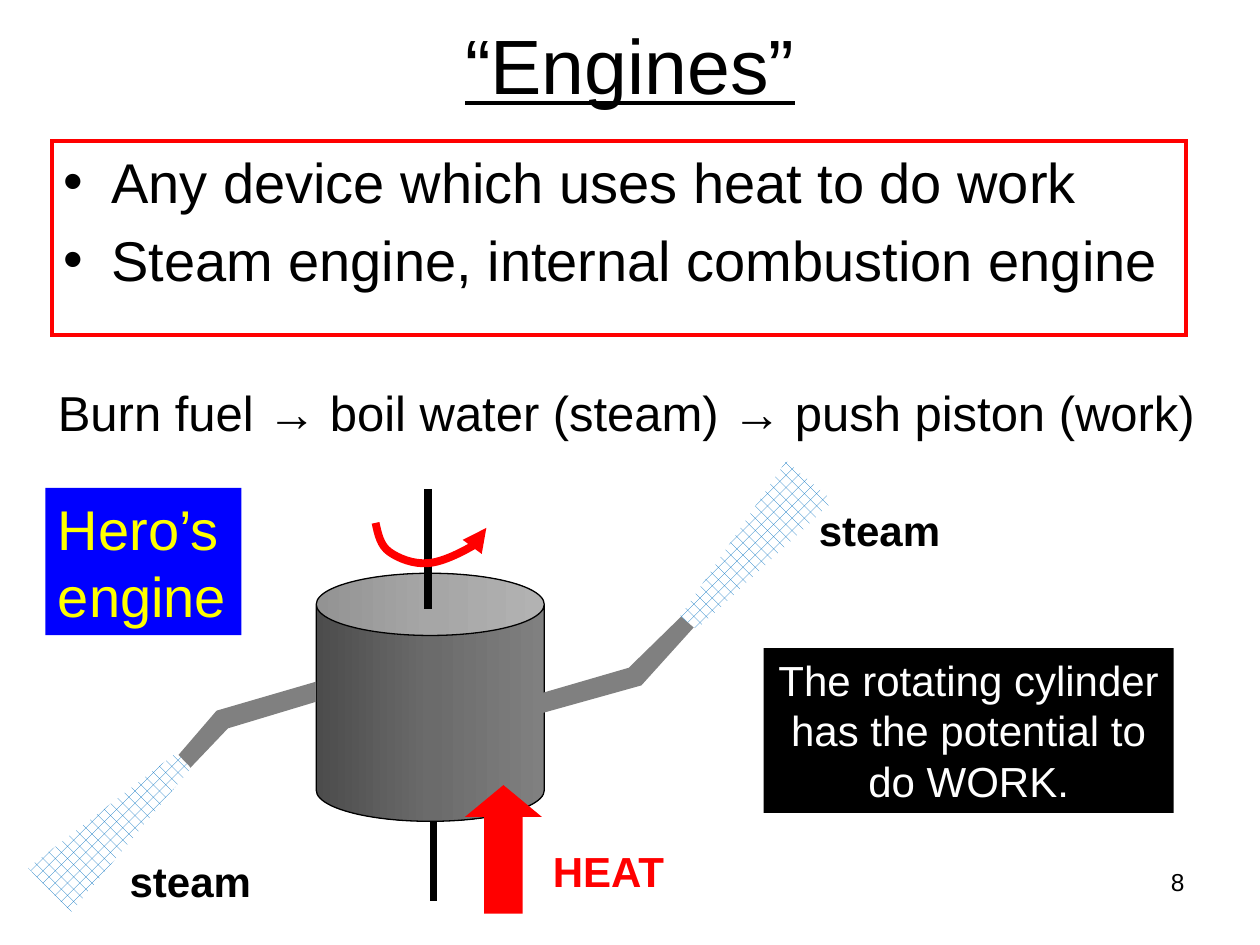
import copy

import pptx
import pptx.dml.color
import pptx.enum.dml
import pptx.enum.shapes
import pptx.enum.text
import pptx.oxml
import pptx.oxml.ns
import pptx.util
from lxml import etree

Pt = pptx.util.Pt
qn = pptx.oxml.ns.qn
SHAPE = pptx.enum.shapes.MSO_SHAPE
ALIGN = pptx.enum.text.PP_ALIGN
ANCHOR = pptx.enum.text.MSO_ANCHOR
AUTO = pptx.enum.text.MSO_AUTO_SIZE


def rgb(value):
    return pptx.dml.color.RGBColor.from_string(value)


def apply(obj, values):
    for name, value in values.items():
        setattr(obj, name, value)


class Deck:
    font = "Arial"
    black, white, red, grey = "000000", "FFFFFF", "FF0000", "808080"

    def __init__(self, width, height):
        self.prs = pptx.Presentation()
        apply(self.prs, {"slide_width": Pt(width), "slide_height": Pt(height)})
        self.s = self.prs.slides.add_slide(self.prs.slide_layouts[6])

    def paint(self, sp, fill=None, line=None, weight=0.75):
        sp.shadow.inherit = False
        if fill:
            sp.fill.solid()
            sp.fill.fore_color.rgb = rgb(fill)
        else:
            sp.fill.background()
        if line:
            sp.line.color.rgb = rgb(line)
            sp.line.width = Pt(weight)
            ln = sp._element.xpath("./p:spPr/a:ln")[0]
            etree.SubElement(ln, qn("a:miter"), lim="800000")
        else:
            sp.line.fill.background()

    def shape(self, kind, box, fill=None, line=None, weight=0.75, adj=(), rotation=0):
        sp = self.s.shapes.add_shape(kind, *map(Pt, box))
        self.paint(sp, fill, line, weight)
        for i, value in enumerate(adj):
            sp.adjustments[i] = value
        sp.rotation = rotation
        return sp

    def text(self, box, paragraphs, size, color=None, align=ALIGN.LEFT, wrap=False,
             anchor=ANCHOR.TOP, bullet=False, fill=None, line=None, weight=0.75, **style):
        sp = self.s.shapes.add_textbox(*map(Pt, box))
        self.paint(sp, fill, line, weight)
        tf = sp.text_frame
        apply(tf, {"word_wrap": wrap, "vertical_anchor": anchor,
                   "auto_size": AUTO.NONE if wrap else AUTO.SHAPE_TO_FIT_TEXT})
        for i, content in enumerate(paragraphs):
            p = tf.add_paragraph() if i else tf.paragraphs[0]
            apply(p, {"text": content, "alignment": align})
            for r in p.runs:
                apply(r.font, {"name": self.font, "size": Pt(size), **style})
                r.font.color.rgb = rgb(color or self.black)
            if bullet:
                self.bullet(p, size)

    def bullet(self, p, size):
        p.space_before = Pt(0.2 * size)
        pPr = p._p.get_or_add_pPr()
        pPr.set("marL", str(Pt(27)))
        pPr.set("indent", str(-Pt(27)))
        etree.SubElement(pPr, qn("a:buFont"), typeface=self.font)
        etree.SubElement(pPr, qn("a:buChar"), char="•")

    def axle(self, x, top, bottom):
        sp = self.s.shapes.add_connector(
            pptx.enum.shapes.MSO_CONNECTOR.STRAIGHT, *map(Pt, (x, top, x, bottom)))
        sp.line.color.rgb = rgb(self.black)
        sp.line.width = Pt(4.5)
        etree.SubElement(sp._element.spPr, qn("a:effectLst"))

    def outline(self, points, close, **look):
        start, *rest = [(Pt(x), Pt(y)) for x, y in points]
        builder = self.s.shapes.build_freeform(*start)
        builder.add_line_segments(rest, close=close)
        sp = builder.convert_to_shape()
        self.paint(sp, **look)
        return sp

    def curved_arrow(self, points, color, weight):
        sp = self.outline(points, False, line=color, weight=weight)
        segments = sp._element.xpath(".//a:lnTo")
        for i in range(0, len(segments), 3):
            curve = etree.SubElement(segments[i].getparent(), qn("a:cubicBezTo"))
            for segment in segments[i:i + 3]:
                curve.append(segment[0])
                segment.getparent().remove(segment)
        ln = sp._element.xpath("./p:spPr/a:ln")[0]
        etree.SubElement(ln, qn("a:tailEnd"), type="triangle")

    def cylinder(self, box, colors):
        sp = self.shape(SHAPE.CAN, box, line=self.black, adj=[0.273])
        sp.fill.gradient()
        sp.fill.gradient_angle = 0
        first = sp._element.xpath(".//a:gs")[0]
        first.addnext(copy.deepcopy(first))
        for i, stop in enumerate(sp.fill.gradient_stops):
            stop.position = i / (len(colors) - 1)
            stop.color.rgb = rgb(colors[i])

    def steam(self, box, rotation):
        sp = self.shape(SHAPE.TRAPEZOID, box, adj=[0.327], rotation=rotation)
        sp.fill.patterned()
        sp.fill.pattern = pptx.enum.dml.MSO_PATTERN.PERCENT_30
        sp.fill.fore_color.rgb = rgb("0070C0")
        sp.fill.back_color.rgb = rgb(self.white)


def main():
    d = Deck(720, 540)
    d.text((0, 0, 720, 72.7), ["“Engines”"], 44, align=ALIGN.CENTER, wrap=True,
           anchor=ANCHOR.MIDDLE, fill=d.white, underline=True)
    d.text((29.5, 80.6, 648, 110.9),
           ["Any device which uses heat to do work",
            "Steam engine, internal combustion engine"],
           32, wrap=True, bullet=True, line=d.red, weight=2.25)
    d.text((26, 215, 665.5, 41),
           ["Burn fuel → boil water (steam) → push piston (work)"], 28)

    d.axle(247.7, 465, 514.8)
    d.text((26, 278.8, 112, 84.2), ["Hero’s", "engine"], 32, "FFFF00", fill="0000FF")
    d.cylinder((180.7, 327.6, 130.3, 141.8), ["4C4C4C", "6B6B6B", d.grey])
    d.axle(244.8, 279.4, 347.8)
    d.curved_arrow(
        [(214.6, 298.8), (216, 305.3), (217.4, 311.8), (222.5, 315.4),
         (227.5, 319), (236.2, 322.6), (244.8, 321.8),
         (253.4, 321.1), (267.1, 313.9), (272.9, 310.3),
         (277.9, 307.4), (277.9, 304.6), (277.9, 301.7)], d.red, 4.5)

    left_pipe = [(180.7, 389.5), (123.8, 406.1), (92.2, 442.8),
                 (101.5, 446.4), (130.3, 416.2), (180.7, 401)]
    right_pipe = [(307.4, 408.2), (366.5, 391.7), (399.6, 355),
                  (390.2, 351.4), (359.3, 381.6), (307.4, 396.7)]
    for pipe in (left_pipe, right_pipe):
        d.outline(pipe, True, fill=d.grey)

    d.shape(SHAPE.UP_ARROW, (265.7, 448.6, 44, 73.4), d.red, adj=[0.5, 0.414])
    d.text((308.9, 479.5, 80, 36), ["HEAT"], 24, d.red, bold=True)
    for left, top in ((460.8, 284.7), (67, 485.3)):
        d.text((left, top, 84, 36), ["steam"], 24, bold=True)
    d.text((516.2, 491.8, 167.8, 37.4), ["8"], 14, align=ALIGN.RIGHT, wrap=True)
    for left, top, rotation in ((410.4, 262.1, 220.5), (49, 418.3, 46)):
        d.steam((left, top, 35.3, 106.6), rotation)
    d.text((436.3, 370.3, 234.4, 94.3),
           ["The rotating cylinder\vhas the potential to\vdo WORK."],
           24, d.white, align=ALIGN.CENTER, fill=d.black)
    d.prs.save("out.pptx")


if __name__ == "__main__":
    main()
